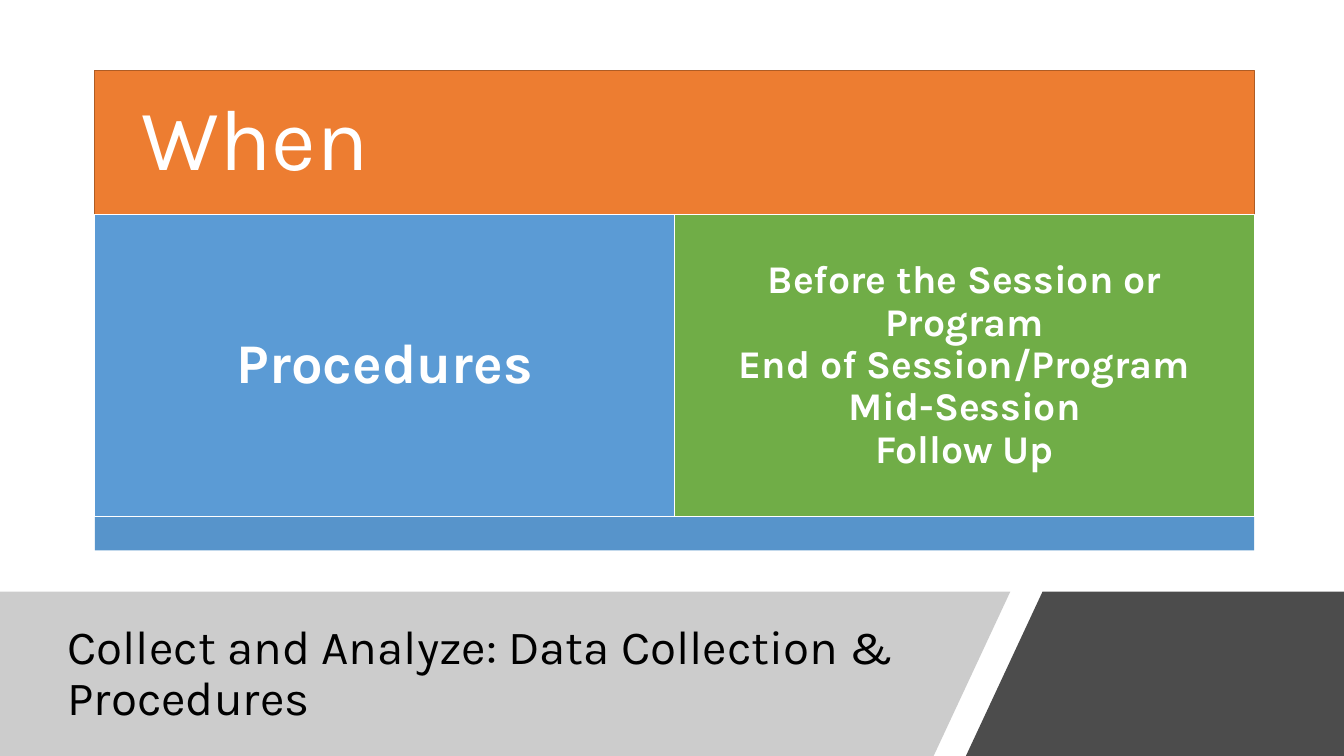
"""Build the slide on when data collection procedures take place."""
import pptx
import pptx.util
import pptx.dml.color
import pptx.enum.shapes
import pptx.enum.text
import pptx.oxml.ns
import lxml.etree

Inches = pptx.util.Inches
ALIGN = pptx.enum.text.PP_ALIGN


def paint(fmt, color):
    fmt.solid()
    fmt.fore_color.rgb = pptx.dml.color.RGBColor.from_string(color)


def write(sp, text, size, color="FFFFFF", bold=False, align=ALIGN.LEFT, inset=None):
    tf = sp.text_frame
    tf.word_wrap = True
    tf.auto_size = pptx.enum.text.MSO_AUTO_SIZE.NONE
    tf.vertical_anchor = pptx.enum.text.MSO_ANCHOR.MIDDLE
    if inset is not None:
        tf.margin_left = tf.margin_right = Inches(inset)
        tf.margin_top = tf.margin_bottom = Inches(inset)
    p = tf.paragraphs[0]
    p.text = text
    p.alignment = align
    p.line_spacing = 0.9
    for r in p.runs:
        r.font.name = "Karla"
        r.font.size = pptx.util.Pt(size)
        r.font.bold = bold
        paint(r.font.fill, color)


prs = pptx.Presentation()
prs.slide_width, prs.slide_height = Inches(13.33), Inches(7.5)
s = prs.slides.add_slide(prs.slide_layouts[5])

title = s.shapes.title
title.left, title.top = Inches(0.57), Inches(6.09)
title.width, title.height = Inches(8.44), Inches(1.2)
write(title, "Collect and Analyze: Data Collection & Procedures", 34, "000000")

bands = [
    ([(0, 5.87), (10.02, 5.87), (9.26, 7.5), (0, 7.5)], "808080", 40),
    ([(10.34, 5.87), (13.33, 5.87), (13.33, 7.5), (9.58, 7.5)], "000000", 70),
]
for points, color, opacity in bands:
    corners = [(Inches(x), Inches(y)) for x, y in points]
    fb = s.shapes.build_freeform(*corners[0])
    fb.add_line_segments(corners[1:])
    sp = fb.convert_to_shape()
    sp.shadow.inherit = False
    paint(sp.fill, color)
    sp.line.fill.background()
    srgb = sp.fill._xPr.find(".//" + pptx.oxml.ns.qn("a:srgbClr"))
    lxml.etree.SubElement(srgb, pptx.oxml.ns.qn("a:alpha"), val=str(opacity * 1000))
    title._element.addprevious(sp._element)

left, width, half = 0.94, 11.5, 5.75
timing = "Before the Session or Program\vEnd of Session/Program\vMid-Session\vFollow Up"
boxes = [
    (left, 0.7, width, 1.43, "ED7D31", "AF5C24",
     dict(text=" When", size=62, inset=0.26)),
    (left, 2.13, half, 3, "5B9BD5", "FFFFFF",
     dict(text="Procedures", size=40, bold=True, align=ALIGN.CENTER, inset=0.17)),
    (left + half, 2.13, half, 3, "70AD47", "FFFFFF",
     dict(text=timing, size=28, bold=True, align=ALIGN.CENTER, inset=0.12)),
    (left, 5.13, width, 0.33, "5794CB", None, None),
]
for x, y, w, h, fill, line, label in boxes:
    sp = s.shapes.add_shape(pptx.enum.shapes.MSO_SHAPE.RECTANGLE,
                            Inches(x), Inches(y), Inches(w), Inches(h))
    sp.shadow.inherit = False
    paint(sp.fill, fill)
    if line:
        paint(sp.line.fill, line)
        sp.line.width = pptx.util.Pt(1)
    else:
        sp.line.fill.background()
    if label:
        write(sp, **label)

prs.save("out.pptx")
